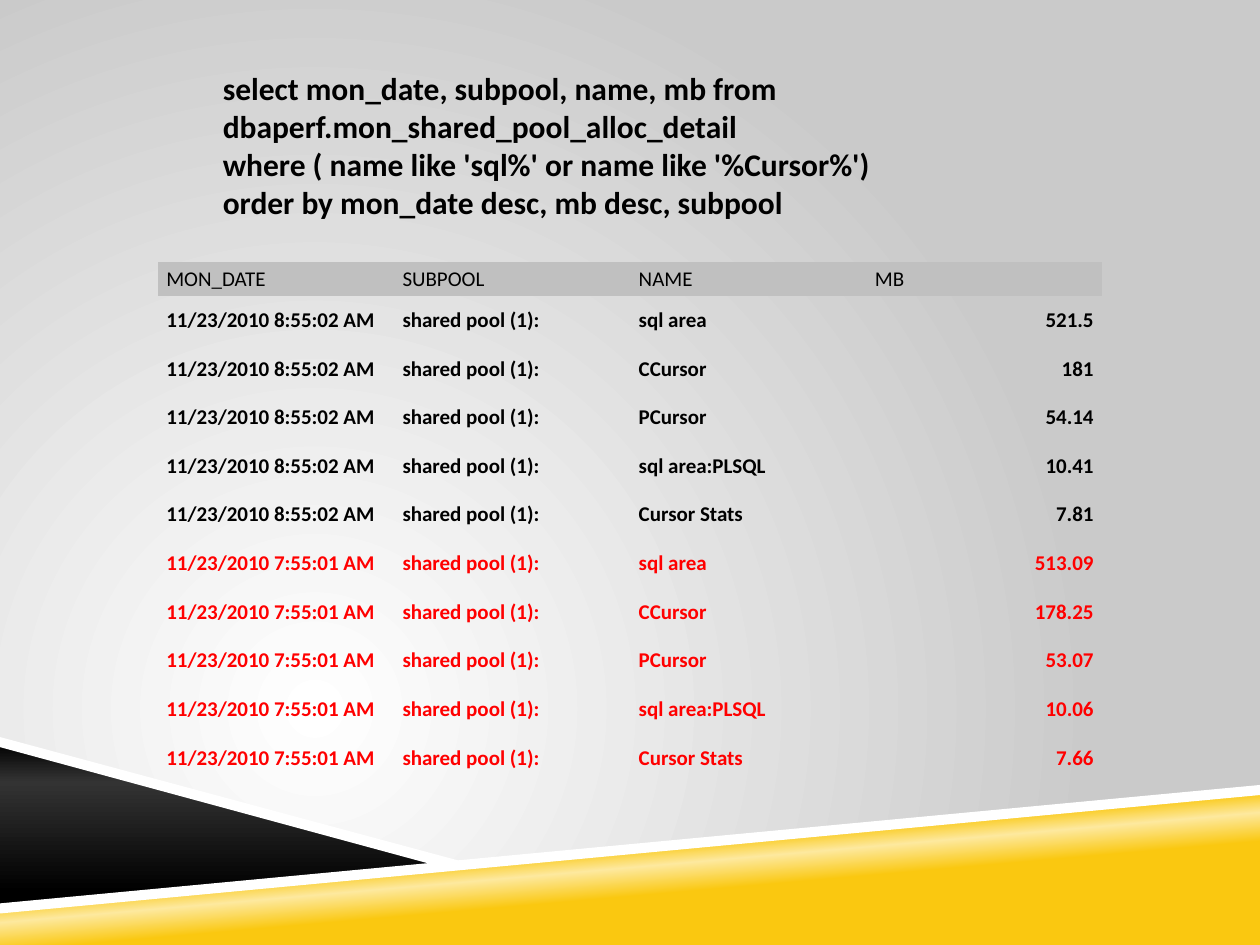
"""Build the slide that lists shared pool allocations by snapshot."""
from typing import Any, NamedTuple

from lxml import etree
from pptx import Presentation
from pptx.dml.color import RGBColor
from pptx.enum.dml import MSO_FILL
from pptx.enum.text import MSO_ANCHOR, PP_ALIGN
from pptx.oxml.ns import qn
from pptx.util import Inches, Pt

SOLID = MSO_FILL.SOLID
MIDDLE = MSO_ANCHOR.MIDDLE
LEFT, RIGHT = PP_ALIGN.LEFT, PP_ALIGN.RIGHT
NO_GRID_STYLE = "{2D5ABB26-0587-4C30-8999-92F81FD0307C}"

COLORS = {
    "white": "FFFFFF",
    "mist": "CACACA",
    "gold": "FAC810",
    "cream": "FDE99F",
    "black": "000000",
    "charcoal": "333333",
    "header": "C0C0C0",
    "earlier": "FF0000",
}
QUERY_FONT = {"name": "Calibri", "size": Pt(18), "bold": True}
HEADER_FONT = {"name": "Calibri", "size": Pt(12), "bold": False}
BODY_FONT = {**HEADER_FONT, "bold": True}
CELL_FORMAT = {
    "vertical_anchor": MIDDLE,
    "margin_left": Inches(0.07),
    "margin_right": Inches(0.07),
    "margin_top": Inches(0.03),
    "margin_bottom": Inches(0.03),
}

QUERY = """select mon_date, subpool, name, mb from dbaperf.mon_shared_pool_alloc_detail
where ( name like 'sql%' or name like '%Cursor%')
order by mon_date desc, mb desc, subpool"""
HEADINGS = ("MON_DATE", "SUBPOOL", "NAME", "MB")
SUBPOOL = "shared pool (1):"
AREAS = ("sql area", "CCursor", "PCursor", "sql area:PLSQL", "Cursor Stats")
TABLE_WIDTH, TABLE_HEIGHT, HEADER_HEIGHT = 7.5, 4.13, 0.27


class Snapshot(NamedTuple):
    """Megabytes per area at one moment."""
    date: str
    megabytes: tuple[str, ...]
    color: str


class Gradient(NamedTuple):
    """Colour stops with an angle, or circular when the angle is None."""
    stops: tuple[tuple[int, str], ...]
    angle: int | None


class Band(NamedTuple):
    """A polygon of the footer with its fill."""
    points: tuple[tuple[float, float], ...]
    fill: Gradient | str


SNAPSHOTS = (
    Snapshot("11/23/2010 8:55:02 AM", ("521.5", "181", "54.14", "10.41", "7.81"), "black"),
    Snapshot("11/23/2010 7:55:01 AM", ("513.09", "178.25", "53.07", "10.06", "7.66"), "earlier"),
)
BACKDROP = Gradient(((0, "white"), (100, "mist")), None)
GOLD = Gradient(((39, "gold"), (50, "cream"), (58, "gold")), 265)
DARK = Gradient(((0, "black"), (24, "charcoal"), (90, "black")), 90)
BANDS = (
    Band(((0, 7.21), (10, 6.27), (10, 7.5), (0, 7.5)), GOLD),
    Band(((0, 5.89), (3.59, 6.85), (0, 7.21)), DARK),
    Band(((10, 6.23), (0, 7.17), (0, 7.25), (10, 6.31)), "white"),
    Band(((0, 5.85), (0, 5.93), (3.5, 6.88), (3.75, 6.86)), "white"),
)


def rgb(color: str) -> RGBColor:
    """Return the named colour."""
    return RGBColor.from_string(COLORS[color])


def apply_format(target: Any, values: dict[str, Any]) -> None:
    """Set every format value on the target."""
    for attribute, value in values.items():
        setattr(target, attribute, value)


def fill_gradient(fill: Any, owner: Any, gradient: Gradient) -> None:
    """Give the fill inside the owner element the gradient."""
    fill.gradient()
    element = next(owner.iter(qn("a:gradFill")))
    for child in list(element):
        element.remove(child)
    stops = etree.SubElement(element, qn("a:gsLst"))
    for position, color in gradient.stops:
        stop = etree.SubElement(stops, qn("a:gs"), pos=str(position * 1000))
        etree.SubElement(stop, qn("a:srgbClr"), val=COLORS[color])
    if gradient.angle is None:
        circle = etree.SubElement(element, qn("a:path"), path="circle")
        etree.SubElement(circle, qn("a:fillToRect"), l="50000", t="100000", r="100000", b="50000")
    else:
        etree.SubElement(element, qn("a:lin"), ang=str(gradient.angle * 60000), scaled="0")


def draw_band(slide: Any, band: Band) -> None:
    """Draw one footer polygon."""
    start, *others = [(Inches(x), Inches(y)) for x, y in band.points]
    builder = slide.shapes.build_freeform(*start)
    builder.add_line_segments(others, close=True)
    polygon = builder.convert_to_shape()
    polygon.shadow.inherit = False
    polygon.line.fill.background()
    if isinstance(band.fill, Gradient):
        fill_gradient(polygon.fill, polygon.element.spPr, band.fill)
    else:
        polygon.fill.solid()
        polygon.fill.fore_color.rgb = rgb(band.fill)


def write_text(frame: Any, text: str, font: dict[str, Any], color: str, align: Any = LEFT) -> None:
    """Write one formatted paragraph."""
    paragraph = frame.paragraphs[0]
    paragraph.text = text
    paragraph.alignment = align
    for run in paragraph.runs:
        apply_format(run.font, font)
        run.font.color.rgb = rgb(color)


def draw_query(slide: Any) -> None:
    """Draw the query above the table."""
    query = slide.shapes.add_textbox(Inches(1.67), Inches(0.5), Inches(6), Inches(1.62))
    query.text_frame.word_wrap = True
    write_text(query.text_frame, QUERY, QUERY_FONT, "black")


def draw_results(slide: Any) -> None:
    """Draw the table of query results."""
    records = [(HEADINGS, "black")] + [
        ((snapshot.date, SUBPOOL, area, megabytes), snapshot.color)
        for snapshot in SNAPSHOTS
        for area, megabytes in zip(AREAS, snapshot.megabytes)
    ]
    results = slide.shapes.add_table(
        len(records), len(HEADINGS), Inches(1.25), Inches(2.08),
        Inches(TABLE_WIDTH), Inches(TABLE_HEIGHT),
    ).table
    next(results._tbl.iter(qn("a:tableStyleId"))).text = NO_GRID_STYLE
    apply_format(results, {"first_row": False, "horz_banding": False})
    body_height = (TABLE_HEIGHT - HEADER_HEIGHT) / (len(records) - 1)
    for row, (values, color) in enumerate(records):
        is_header = row == 0
        results.rows[row].height = Inches(HEADER_HEIGHT if is_header else body_height)
        for column, value in enumerate(values):
            cell = results.cell(row, column)
            apply_format(cell, CELL_FORMAT)
            is_amount = not is_header and HEADINGS[column] == "MB"
            font = HEADER_FONT if is_header else BODY_FONT
            write_text(cell.text_frame, value, font, color, RIGHT if is_amount else LEFT)
            if is_header:
                cell.fill.solid()
            else:
                cell.fill.background()
            if cell.fill.type == SOLID:
                cell.fill.fore_color.rgb = rgb("header")


def main() -> None:
    """Build and save the presentation."""
    presentation = Presentation()
    presentation.slide_width = Inches(10)
    presentation.slide_height = Inches(7.5)
    slide = presentation.slides.add_slide(presentation.slide_layouts[6])
    fill_gradient(slide.background.fill, slide.element, BACKDROP)
    for band in BANDS:
        draw_band(slide, band)
    draw_results(slide)
    draw_query(slide)
    presentation.save("out.pptx")


if __name__ == "__main__":
    main()
